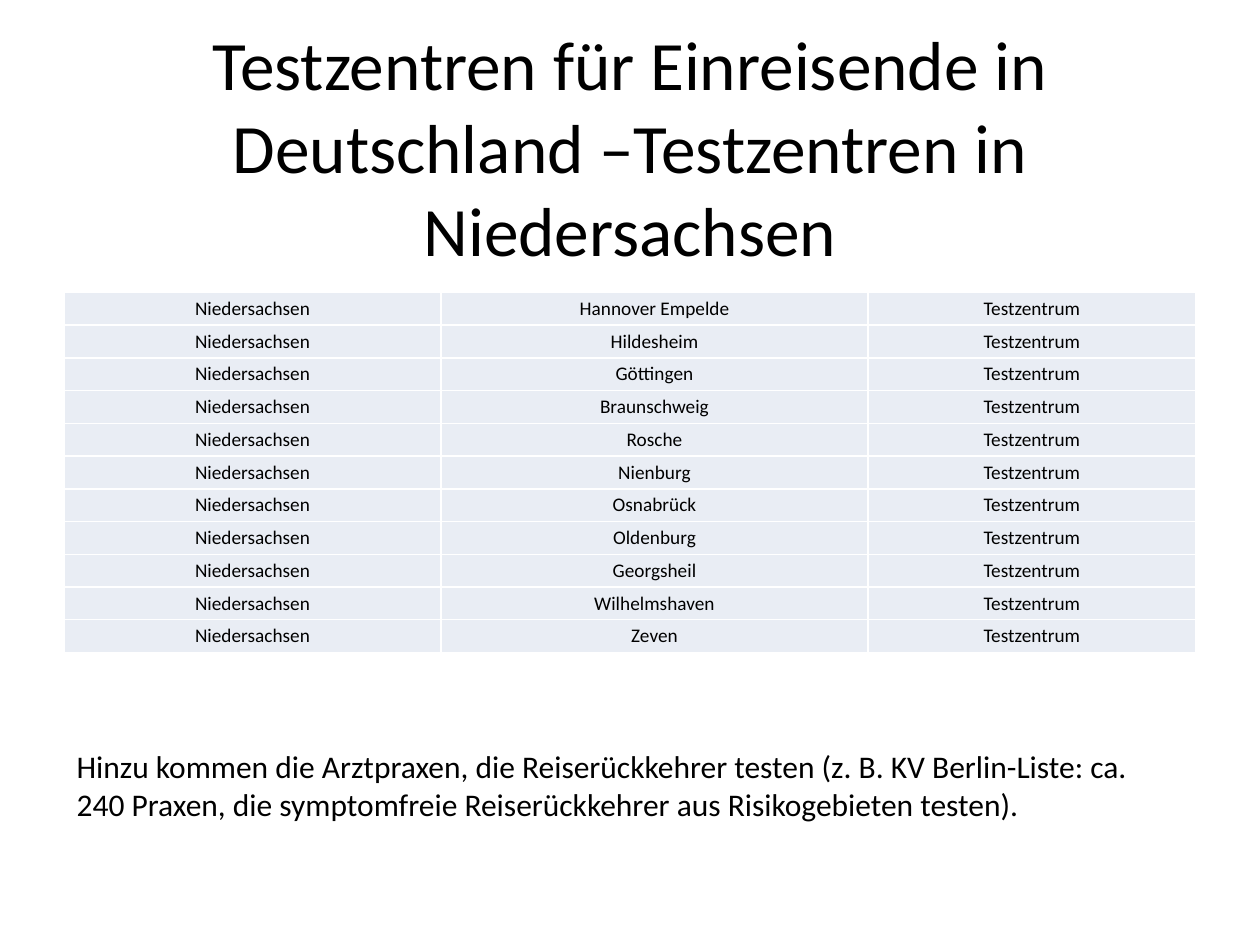
from pptx import Presentation
from pptx.dml.color import RGBColor
from pptx.enum.text import MSO_ANCHOR, PP_ALIGN
from pptx.util import Inches, Pt

TITLE = "Testzentren für Einreisende in Deutschland –Testzentren in Niedersachsen"
STATE, KIND = "Niedersachsen", "Testzentrum"
TOWNS = [
    "Hannover Empelde", "Hildesheim", "Göttingen", "Braunschweig",
    "Rosche", "Nienburg", "Osnabrück", "Oldenburg",
    "Georgsheil", "Wilhelmshaven", "Zeven",
]
NOTE = (
    "Hinzu kommen die Arztpraxen, die Reiserückkehrer testen "
    "(z. B. KV Berlin-Liste: ca. 240 Praxen, die symptomfreie "
    "Reiserückkehrer aus Risikogebieten testen)."
)
WIDTHS = [2.99, 3.39, 2.6]
ROW = 0.26
FONT, INK, FILL = "Calibri", "000000", "E9EDF4"


def color(code):
    """Turn a hex string into a colour."""
    return RGBColor.from_string(code)


def write(frame, text, size, align):
    """Put one styled paragraph into a text frame."""
    frame.text = text
    line = frame.paragraphs[0]
    line.alignment = align
    font = line.runs[0].font
    font.name, font.size = FONT, Pt(size)
    font.color.rgb = color(INK)


def add_text(slide, box, text, size, align, anchor):
    """Add a wrapped text box."""
    frame = slide.shapes.add_textbox(*map(Inches, box)).text_frame
    frame.word_wrap = True
    frame.vertical_anchor = anchor
    write(frame, text, size, align)


def add_grid(slide, left, top):
    """Add the table of test centres."""
    rows = [(STATE, town, KIND) for town in TOWNS]
    box = (left, top, sum(WIDTHS), ROW * len(rows))
    table = slide.shapes.add_table(
        len(rows), len(WIDTHS), *map(Inches, box)
    ).table
    table.first_row = table.horz_banding = False
    for column, width in zip(table.columns, WIDTHS):
        column.width = Inches(width)
    for row, words in zip(table.rows, rows):
        row.height = Inches(ROW)
        for cell, text in zip(row.cells, words):
            cell.margin_left = cell.margin_right = 0
            cell.margin_top = cell.margin_bottom = 0
            cell.vertical_anchor = MSO_ANCHOR.MIDDLE
            cell.fill.solid()
            cell.fill.fore_color.rgb = color(FILL)
            write(cell.text_frame, text, 11, PP_ALIGN.CENTER)


def main():
    """Build and save the slide."""
    deck = Presentation()
    deck.slide_width, deck.slide_height = Inches(10), Inches(7.5)
    slide = deck.slides.add_slide(deck.slide_layouts[6])
    add_grid(slide, 0.51, 2.32)
    add_text(slide, (0.5, 0.53, 9, 1.25), TITLE, 39.6,
             PP_ALIGN.CENTER, MSO_ANCHOR.MIDDLE)
    add_text(slide, (0.51, 5.88, 8.82, 0.71), NOTE, 18,
             PP_ALIGN.LEFT, MSO_ANCHOR.TOP)
    deck.save("out.pptx")


if __name__ == "__main__":
    main()
